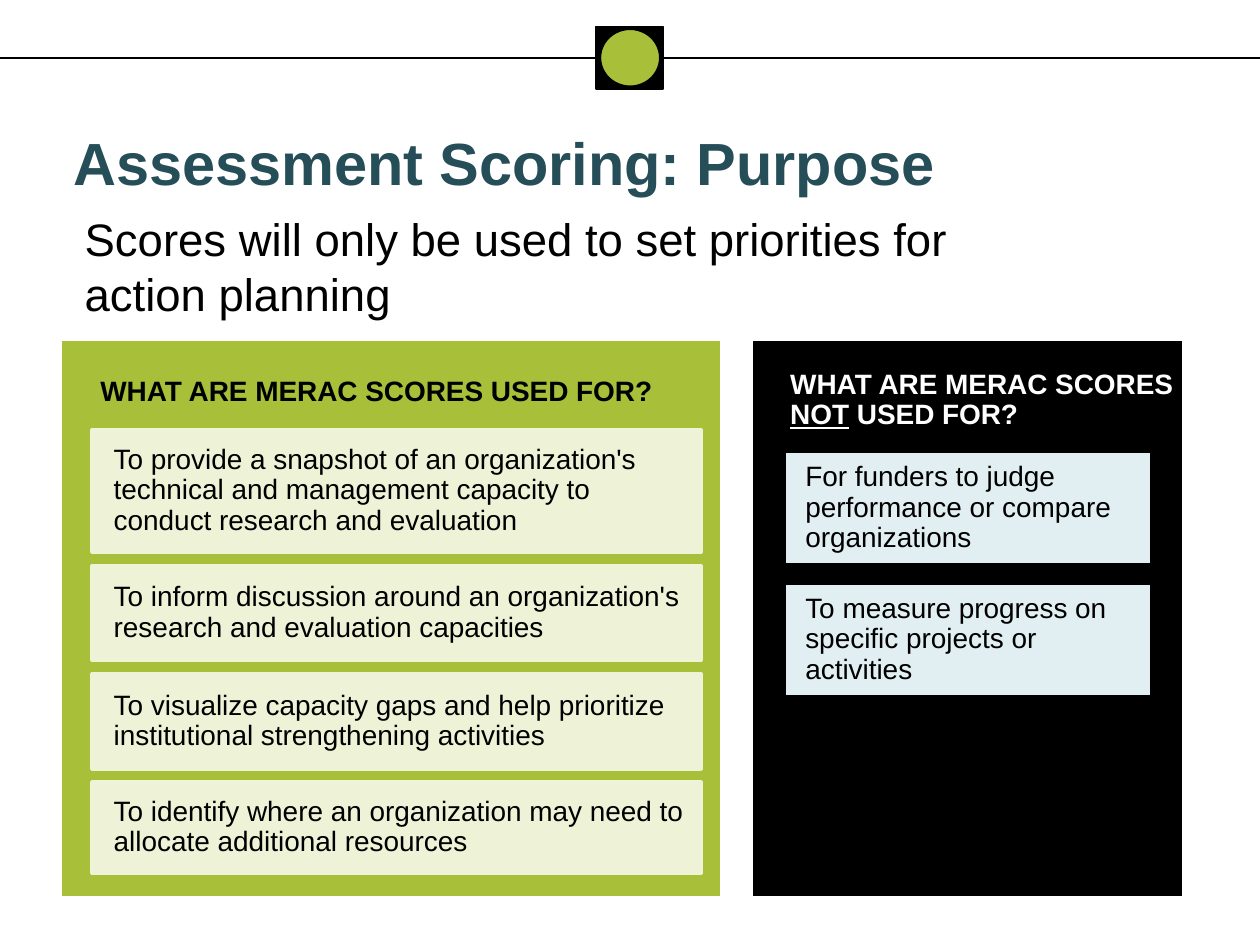
from dataclasses import dataclass

from lxml.etree import SubElement
from pptx import Presentation
from pptx.dml.color import RGBColor
from pptx.enum.shapes import MSO_CONNECTOR, MSO_SHAPE
from pptx.enum.text import MSO_ANCHOR, PP_ALIGN
from pptx.oxml.ns import qn
from pptx.util import Pt

COLORS = {
    "black": "000000",
    "white": "FFFFFF",
    "green": "A7BF39",
    "pale_green": "EEF3D7",
    "pale_blue": "E2EFF2",
    "teal": "264E59",
}
FONT = "Arial"
HEADING_INSETS = (3.6, 2.9, 3.6, 2.9)
CARD_INSETS = (12.2, 3.6, 4.3, 3.6)


@dataclass
class Box:
    left: float
    top: float
    width: float
    height: float


@dataclass
class Card:
    text: str
    height: float


@dataclass
class CardStack:
    left: float
    top: float
    width: float
    gap: float
    fill: str
    line: str
    cards: list[Card]


STACKS = [
    CardStack(52.8, 245.6, 347.8, 7.9, "pale_green", "pale_green", [
        Card("To provide a snapshot of an organization's technical and "
             "management capacity to conduct research and evaluation", 69.8),
        Card("To inform discussion around an organization's research and "
             "evaluation capacities", 54),
        Card("To visualize capacity gaps and help prioritize institutional "
             "strengthening activities", 54),
        Card("To identify where an organization may need to allocate "
             "additional resources", 51.8),
    ]),
    CardStack(448, 257.9, 210.2, 10.6, "pale_blue", "black", [
        Card("For funders to judge performance or compare organizations", 64.8),
        Card("To measure progress on specific projects or activities", 64.8),
    ]),
]


def rgb(name: str) -> RGBColor:
    return RGBColor.from_string(COLORS[name])


def add_box(slide, box: Box, fill: str, line: str | None = None,
            weight: float = 1, kind=MSO_SHAPE.RECTANGLE):
    sp = slide.shapes.add_shape(kind, Pt(box.left), Pt(box.top),
                                Pt(box.width), Pt(box.height))
    sp.shadow.inherit = False
    sp.fill.solid()
    sp.fill.fore_color.rgb = rgb(fill)
    if line:
        sp.line.color.rgb = rgb(line)
        sp.line.width = Pt(weight)
    else:
        sp.line.fill.background()
    return sp


def add_textbox(slide, box: Box):
    return slide.shapes.add_textbox(Pt(box.left), Pt(box.top),
                                    Pt(box.width), Pt(box.height))


def write(sp, text: str, *, size: float = 16, color: str = "black",
          bold: bool = False, underlined: str = "", align=PP_ALIGN.LEFT,
          anchor=MSO_ANCHOR.MIDDLE, spacing: float = 0.9,
          insets: tuple = (7.2, 3.6, 7.2, 3.6)) -> None:
    """Fill a shape with one paragraph; a newline in text is a line break."""
    tf = sp.text_frame
    tf.word_wrap = True
    tf.vertical_anchor = anchor
    (tf.margin_left, tf.margin_top,
     tf.margin_right, tf.margin_bottom) = map(Pt, insets)
    p = tf.paragraphs[0]
    p.alignment = align
    p.line_spacing = spacing
    before, mark, after = text.partition(underlined) if underlined else (text, "", "")
    for part in filter(None, (before, mark, after)):
        lines = part.split("\n")
        for i, line in enumerate(lines):
            if i:
                p.add_line_break()
            if not line:
                continue
            r = p.add_run()
            r.text = line
            r.font.name = FONT
            r.font.size = Pt(size)
            r.font.bold = bold
            r.font.underline = part == underlined
            r.font.color.rgb = rgb(color)


def add_rule(slide, y: float, width: float) -> None:
    cxn = slide.shapes.add_connector(MSO_CONNECTOR.STRAIGHT,
                                     Pt(0), Pt(y), Pt(width), Pt(y))
    cxn.line.color.rgb = rgb("black")
    cxn.line.width = Pt(0.75)
    SubElement(cxn._element.spPr, qn("a:effectLst"))


def add_stack(slide, stack: CardStack) -> None:
    top = stack.top
    for card in stack.cards:
        sp = add_box(slide, Box(stack.left, top, stack.width, card.height),
                     stack.fill, stack.line, 2.25)
        write(sp, card.text, insets=CARD_INSETS)
        top += card.height + stack.gap


def main() -> None:
    prs = Presentation()
    prs.slide_width, prs.slide_height = Pt(720), Pt(540)
    slide = prs.slides.add_slide(prs.slide_layouts[6])

    add_rule(slide, 33.1, 720)
    add_box(slide, Box(340.6, 15.1, 38.2, 36), "black", "black")
    add_box(slide, Box(343.2, 16.8, 33.8, 32.4), "green", "black", 0.75,
            MSO_SHAPE.OVAL)

    write(add_textbox(slide, Box(34.8, 68.4, 537.8, 66.2)),
          "Assessment Scoring: Purpose", size=34, color="teal", bold=True,
          anchor=MSO_ANCHOR.TOP, spacing=1.0)
    write(add_textbox(slide, Box(41.3, 117.2, 558.7, 91.4)),
          "Scores will only be used to set priorities for action planning",
          size=26, anchor=MSO_ANCHOR.TOP, spacing=1.0)

    add_box(slide, Box(34.9, 194.4, 377.3, 318.2), "green", "white")
    add_box(slide, Box(430, 194.4, 246.2, 318.2), "black", "white")
    write(add_box(slide, Box(41.3, 202.6, 347.8, 43.2), "green"),
          "WHAT ARE MERAC SCORES USED FOR?", bold=True,
          align=PP_ALIGN.CENTER, insets=HEADING_INSETS)
    write(add_textbox(slide, Box(448, 207.4, 237.6, 43.2)),
          "WHAT ARE MERAC SCORES \nNOT USED FOR?", color="white", bold=True,
          underlined="NOT", insets=HEADING_INSETS)

    for stack in STACKS:
        add_stack(slide, stack)

    prs.save("out.pptx")


if __name__ == "__main__":
    main()
